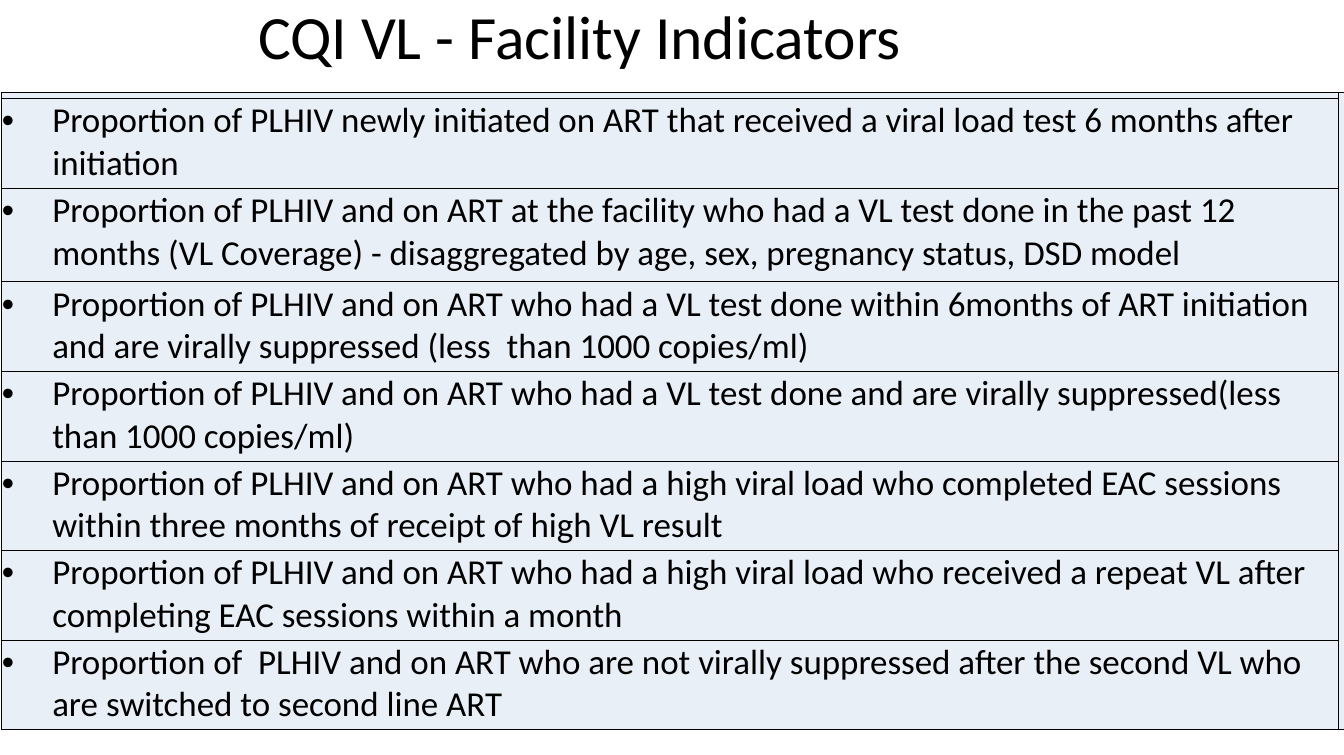
import pptx
import pptx.util
import pptx.dml.color
import pptx.enum.text
import pptx.oxml
from lxml import etree

Inches = pptx.util.Inches
Pt = pptx.util.Pt
TEXT = pptx.enum.text


# Colours and type sizes
class Theme:
    face = "Calibri"
    ink = "000000"
    pale = "E9EFF7"
    head = 44
    body = 25
    tiny = 1
    rule = 0.75


TITLE = "CQI VL - Facility Indicators"
ITEMS = [
    "Proportion of PLHIV newly initiated on ART that received a viral load test "
    "6 months after initiation",
    "Proportion of PLHIV and on ART at the facility who had a VL test done in the "
    "past 12 months (VL Coverage) - disaggregated by age, sex, pregnancy status, DSD model",
    "Proportion of PLHIV and on ART who had a VL test done within 6months of ART "
    "initiation and are virally suppressed (less  than 1000 copies/ml)",
    "Proportion of PLHIV and on ART who had a VL test done and are virally "
    "suppressed(less  than 1000 copies/ml)",
    "Proportion of PLHIV and on ART who had a high viral load who completed EAC "
    "sessions within three months of receipt of high VL result",
    "Proportion of PLHIV and on ART who had a high viral load who received a repeat "
    "VL after completing EAC sessions within a month",
    "Proportion of  PLHIV and on ART who are not virally suppressed after the second "
    "VL who are switched to second line ART",
]


def rgb(code):
    return pptx.dml.color.RGBColor.from_string(code)


def apply(target, values):
    for name, value in values.items():
        setattr(target, name, value)


def add(parent, tag, **attrs):
    node = etree.SubElement(parent, pptx.oxml.ns.qn(tag))
    for name, value in attrs.items():
        node.set(name, str(value))
    return node


class Deck:
    def __init__(self, theme, wide, high):
        self.theme = theme
        self.show = pptx.Presentation()
        apply(self.show, {"slide_width": Inches(wide), "slide_height": Inches(high)})
        self.slide = self.show.slides.add_slide(self.show.slide_layouts[5])

    def font(self, target, size):
        apply(target, {"name": self.theme.face, "size": Pt(size), "bold": False})
        target.color.rgb = rgb(self.theme.ink)

    def title(self, text, left, top, wide, high):
        shape = self.slide.shapes.title
        apply(shape, {"left": Inches(left), "top": Inches(top),
                      "width": Inches(wide), "height": Inches(high)})
        frame = shape.text_frame
        sides = ("left", "right", "top", "bottom")
        apply(frame, {"margin_" + side: Inches(0.05) for side in sides})
        apply(frame, {"word_wrap": True, "auto_size": TEXT.MSO_AUTO_SIZE.NONE,
                      "vertical_anchor": TEXT.MSO_ANCHOR.MIDDLE})
        para = frame.paragraphs[0]
        apply(para, {"alignment": TEXT.PP_ALIGN.CENTER, "line_spacing": 0.9})
        run = para.add_run()
        run.text = text
        self.font(run.font, self.theme.head)

    def table(self, left, top, cols, rows):
        frame = self.slide.shapes.add_table(
            len(rows), len(cols), Inches(left), Inches(top),
            Inches(sum(cols)), Inches(sum(rows)))
        grid = frame.table
        apply(grid, {"first_row": False, "horz_banding": False})
        for col, wide in zip(grid.columns, cols):
            col.width = Inches(wide)
        for row, high in zip(grid.rows, rows):
            row.height = Inches(high)
        for cell in grid.iter_cells():
            self.cell(cell)
        return grid

    def cell(self, cell):
        sides = ("left", "right", "top", "bottom")
        apply(cell, {"margin_" + side: Inches(0.01) for side in sides})
        props = cell._tc.get_or_add_tcPr()
        for side in "LRTB":
            line = add(props, "a:ln" + side, w=Pt(self.theme.rule))
            add(add(line, "a:solidFill"), "a:srgbClr", val=self.theme.ink)
        cell.fill.solid()
        cell.fill.fore_color.rgb = rgb(self.theme.pale)
        # A tiny end mark lets empty cells stay thin
        add(cell.text_frame.paragraphs[0]._p, "a:endParaRPr", sz=self.theme.tiny * 100)

    def bullet(self, cell, text):
        para = cell.text_frame.paragraphs[0]
        props = para._p.get_or_add_pPr()
        apply_to = {"marL": Inches(0.5), "indent": Inches(-0.5)}
        for name, value in apply_to.items():
            props.set(name, str(int(value)))
        add(add(props, "a:buClr"), "a:srgbClr", val=self.theme.ink)
        add(props, "a:buFont", typeface="Arial")
        add(props, "a:buChar", char="•")
        run = para.add_run()
        run.text = text
        self.font(run.font, self.theme.body)


def main():
    deck = Deck(Theme, 13.35, 7.5)

    # Heading
    deck.title(TITLE, 0.01, -0.33, 11.5, 1.45)

    # Indicator table: thin top row, narrow merged column on the right
    rows = [0.06] + [0.89] * len(ITEMS)
    rows[2] = 0.93
    grid = deck.table(0.01, 0.92, [13.29, 0.11], rows)
    grid.cell(0, 1).merge(grid.cell(len(ITEMS), 1))
    for spot, text in enumerate(ITEMS, 1):
        deck.bullet(grid.cell(spot, 0), text)

    deck.show.save("out.pptx")


if __name__ == "__main__":
    main()
